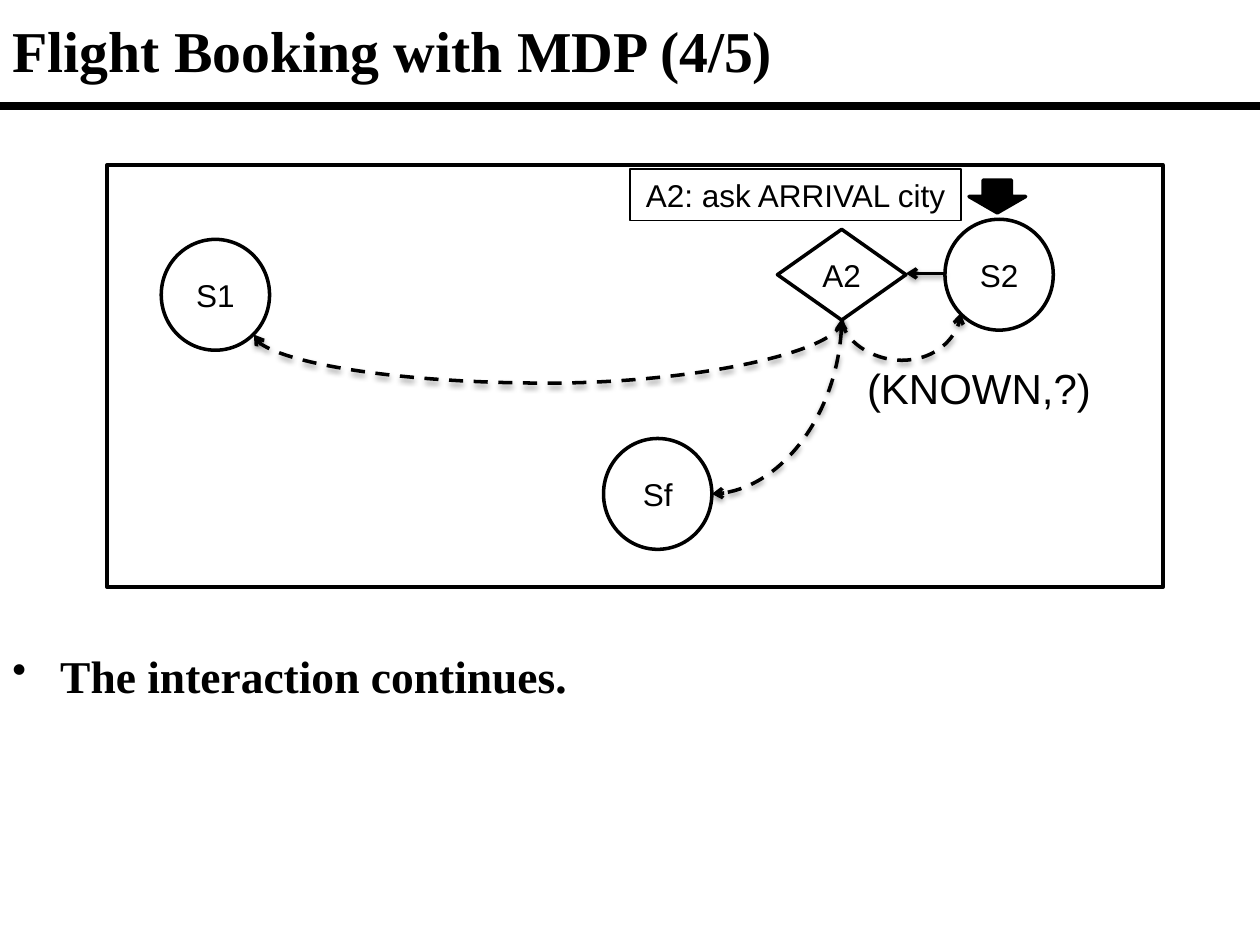
from dataclasses import dataclass

import pptx
import pptx.dml.color
import pptx.enum.shapes
import pptx.enum.text
import pptx.oxml
import pptx.oxml.ns
import pptx.util
from lxml import etree
from pptx.util import Inches, Pt

KIND = pptx.enum.shapes.MSO_SHAPE
LINK = pptx.enum.shapes.MSO_CONNECTOR
ALIGN = pptx.enum.text.PP_ALIGN
ANCHOR = pptx.enum.text.MSO_ANCHOR
BLACK, WHITE = "000000", "FFFFFF"
SERIF, SANS = "Times New Roman", "Arial"
qn = pptx.oxml.ns.qn


@dataclass
class Node:
    kind: KIND
    box: tuple[float, float, float, float]
    text: str = ""
    size: float = 18
    fill: str = WHITE
    line: float = 2


@dataclass
class Curve:
    """Frame before turning, turn in degrees, and the sites it joins."""
    box: tuple[float, float, float, float]
    turn: int
    ends: tuple[str, int, str, int]
    flip: str = ""
    preset: str = "curvedConnector3"
    bend: float | None = None
    dash: bool = True
    both: bool = False


def color(code: str):
    return pptx.dml.color.RGBColor.from_string(code)


def add_run(para, text: str, size: float, face: str, bold: bool = False) -> None:
    run = para.add_run()
    run.text = text
    font = run.font
    font.size, font.name, font.bold = Pt(size), face, bold
    font.color.rgb = color(BLACK)


def draw_node(slide, node: Node):
    shape = slide.shapes.add_shape(node.kind, *map(Inches, node.box))
    shape.shadow.inherit = False
    shape.fill.solid()
    shape.fill.fore_color.rgb = color(node.fill)
    if node.line:
        shape.line.color.rgb = color(BLACK)
        shape.line.width = Pt(node.line)
    else:
        shape.line.fill.background()
    if node.text:
        frame = shape.text_frame
        frame.word_wrap = node.kind != KIND.RECTANGLE
        frame.vertical_anchor = ANCHOR.MIDDLE
        para = frame.paragraphs[0]
        para.alignment = ALIGN.CENTER
        add_run(para, node.text, node.size, SANS)
    return shape


def draw_text(slide, box: tuple, text: str, size: float):
    shape = slide.shapes.add_textbox(*map(Inches, box))
    frame = shape.text_frame
    frame.word_wrap = True
    para = frame.paragraphs[0]
    add_run(para, text, size, SERIF, True)
    return frame, para


def draw_rule(slide) -> None:
    rule = slide.shapes.add_connector(
        LINK.STRAIGHT, 0, Inches(0.84), Inches(10), Inches(0.84))
    rule.line.color.rgb = color(BLACK)
    rule.line.width = Pt(4.5)
    etree.SubElement(rule._element.spPr, qn("a:effectLst"))


def draw_curve(slide, curve: Curve, shapes: dict) -> None:
    x, y, w, h = curve.box
    x1, x2 = (x + w, x) if "h" in curve.flip else (x, x + w)
    y1, y2 = (y + h, y) if "v" in curve.flip else (y, y + h)
    link = slide.shapes.add_connector(LINK.CURVE, *map(Inches, (x1, y1, x2, y2)))
    link.line.color.rgb = color(BLACK)
    link.line.width = Pt(2)
    if curve.dash:
        link.line.dash_style = pptx.enum.dml.MSO_LINE.DASH
    props = link._element.spPr
    props.find(qn("a:xfrm")).set("rot", str(curve.turn * 60000))

    geom = props.find(qn("a:prstGeom"))
    geom.set("prst", curve.preset)
    if curve.bend is not None:
        guide = etree.SubElement(geom.find(qn("a:avLst")), qn("a:gd"))
        guide.set("name", "adj1")
        guide.set("fmla", f"val {round(curve.bend * 100000)}")

    line = props.find(qn("a:ln"))
    for tag in ("a:headEnd", "a:tailEnd") if curve.both else ("a:tailEnd",):
        etree.SubElement(line, qn(tag)).set("type", "arrow")
    props.append(pptx.oxml.parse_xml(
        f'<a:effectLst {pptx.oxml.ns.nsdecls("a")}>'
        '<a:outerShdw blurRad="40000" dist="20000" dir="5400000" rotWithShape="0">'
        f'<a:srgbClr val="{BLACK}"><a:alpha val="38000"/></a:srgbClr>'
        '</a:outerShdw></a:effectLst>'))

    joint = link._element.find(".//" + qn("p:cNvCxnSpPr"))
    start, first, end, last = curve.ends
    for tag, name, site in (("a:stCxn", start, first), ("a:endCxn", end, last)):
        glue = etree.SubElement(joint, qn(tag))
        glue.set("id", str(shapes[name].shape_id))
        glue.set("idx", str(site))


def state(name: str, x: float, y: float) -> Node:
    return Node(KIND.OVAL, (x, y, 0.86, 0.88), name)


NODES = [
    Node(KIND.RECTANGLE, (0.85, 1.31, 8.38, 3.35)),
    state("S1", 1.28, 1.9),
    state("Sf", 4.79, 3.48),
    state("S2", 7.5, 1.74),
    Node(KIND.DIAMOND, (6.17, 1.82, 1.02, 0.72), "A2"),
    Node(KIND.DOWN_ARROW, (7.69, 1.43, 0.45, 0.26), fill=BLACK),
    Node(KIND.RECTANGLE, (6.65, 2.82, 2.24, 0.51), "(KNOWN,?)", 24, line=0),
    Node(KIND.RECTANGLE, (5, 1.34, 2.63, 0.41), "A2: ask ARRIVAL city", line=1),
]
CURVES = [
    Curve((7.19, 2.17, 0.31, 0), 180, ("S2", 2, "A2", 3), "v", bend=0.5, dash=False),
    Curve((7.13, 2.04, 0.05, 0.94), 90, ("A2", 2, "S2", 3), "hv", bend=-6.5),
    Curve((5.47, 2.71, 1.39, 1.03), 90, ("A2", 2, "Sf", 6),
          preset="curvedConnector2", both=True),
    Curve((4.29, 0.26, 0.12, 4.67), 90, ("A2", 2, "S1", 5), bend=4.21),
]


def main() -> None:
    deck = pptx.Presentation()
    deck.slide_width, deck.slide_height = Inches(10), Inches(7.5)
    slide = deck.slides.add_slide(deck.slide_layouts[6])
    draw_rule(slide)

    shapes = {}
    for node in NODES:
        shapes[node.text] = draw_node(slide, node)
    for curve in CURVES:
        draw_curve(slide, curve, shapes)

    _, para = draw_text(slide, (0, 5.09, 10, 0.54), "The interaction continues.", 26)
    para.space_before = Pt(5.2)
    props = para._p.get_or_add_pPr()
    props.set("marL", str(Inches(0.38)))
    props.set("indent", str(-Inches(0.38)))
    etree.SubElement(props, qn("a:buSzPct")).set("val", "90000")
    etree.SubElement(props, qn("a:buChar")).set("char", "•")

    frame, _ = draw_text(slide, (0, 0, 10, 0.79), "Flight Booking with MDP (4/5)", 33)
    frame.vertical_anchor = ANCHOR.MIDDLE
    deck.save("out.pptx")


if __name__ == "__main__":
    main()
